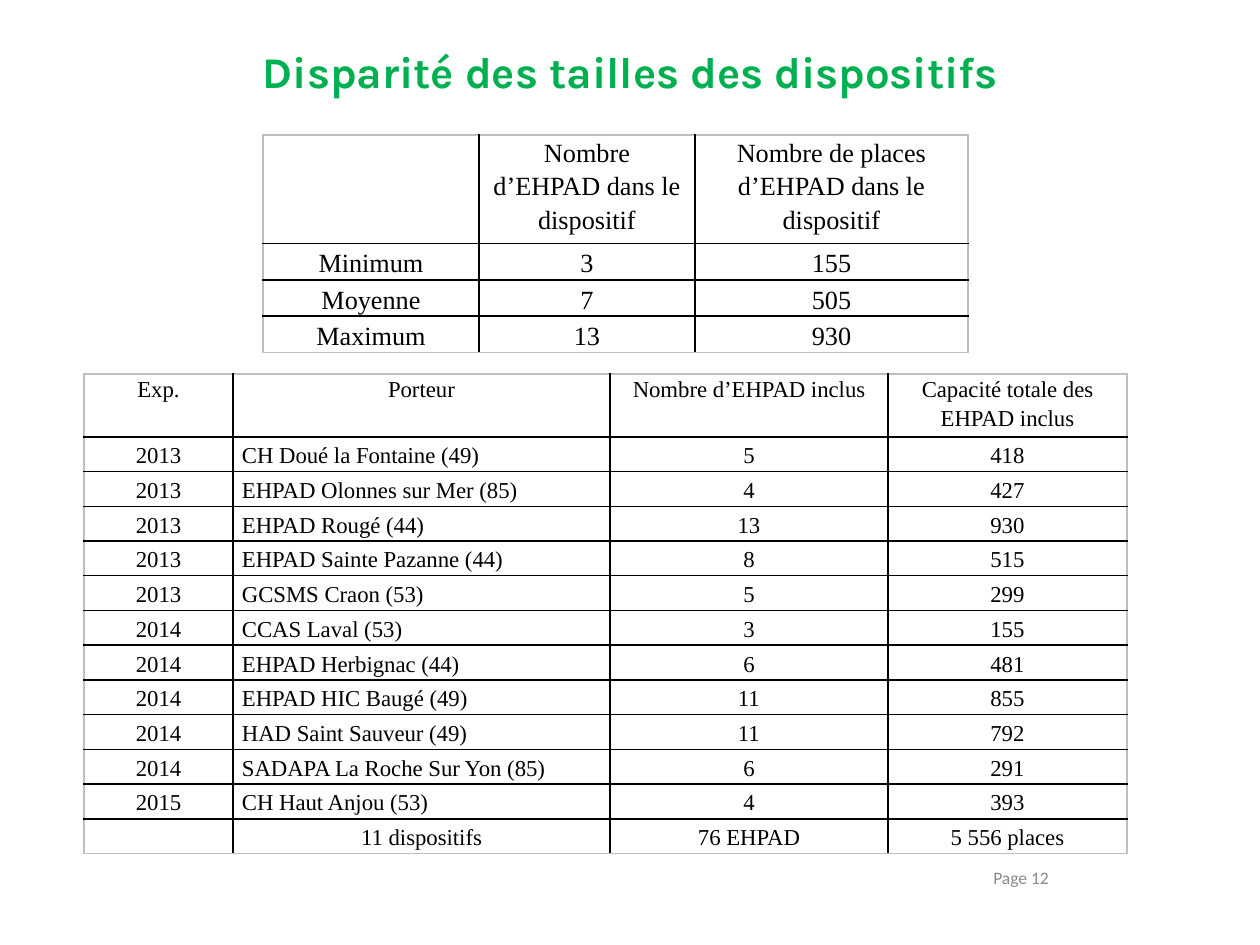
from lxml.etree import SubElement
from pptx import Presentation
from pptx.dml.color import RGBColor
from pptx.enum.text import MSO_ANCHOR, PP_ALIGN
from pptx.oxml.ns import qn
from pptx.util import Emu, Pt

COLORS = {"title": "00B050", "text": "000000", "page": "898989",
          "inner": "000000", "outer": "BFBFBF", "fill": "FFFFFF"}

SIZES = [
    ("", "Nombre d’EHPAD dans le dispositif", "Nombre de places d’EHPAD dans le dispositif"),
    ("Minimum", "3", "155"),
    ("Moyenne", "7", "505"),
    ("Maximum", "13", "930"),
]
PROJECTS = [
    ("Exp.", "Porteur", "Nombre d’EHPAD inclus", "Capacité totale des EHPAD inclus"),
    ("2013", "CH Doué la Fontaine (49)", "5", "418"),
    ("2013", "EHPAD Olonnes sur Mer (85)", "4", "427"),
    ("2013", "EHPAD Rougé (44)", "13", "930"),
    ("2013", "EHPAD Sainte Pazanne (44)", "8", "515"),
    ("2013", "GCSMS Craon (53)", "5", "299"),
    ("2014", "CCAS Laval (53)", "3", "155"),
    ("2014", "EHPAD Herbignac (44)", "6", "481"),
    ("2014", "EHPAD HIC Baugé (49)", "11", "855"),
    ("2014", "HAD Saint Sauveur (49)", "11", "792"),
    ("2014", "SADAPA La Roche Sur Yon (85)", "6", "291"),
    ("2015", "CH Haut Anjou (53)", "4", "393"),
    ("", "11 dispositifs", "76 EHPAD", "5 556 places"),
]


def px(n):
    """Turn pixels at 126 to the inch into EMU."""
    return Emu(round(n * 914400 / 126))


def style(font, name, size, color, bold=False):
    """Set the look of a font."""
    font.name, font.size, font.bold = name, Pt(size), bold
    font.color.rgb = RGBColor.from_string(COLORS[color])


def add_title(s, text, box):
    """Fill and place the title placeholder."""
    sp = s.shapes.title
    sp.left, sp.top, sp.width, sp.height = map(px, box)
    tf = sp.text_frame
    tf.text = text
    tf.vertical_anchor = MSO_ANCHOR.TOP
    p = tf.paragraphs[0]
    p.alignment = PP_ALIGN.CENTER
    style(p.runs[0].font, "Karla", 25, "title", True)


def add_page(s, text, box):
    """Add the page label."""
    tf = s.shapes.add_textbox(*map(px, box)).text_frame
    tf.word_wrap = True
    tf.text = text
    tf.vertical_anchor = MSO_ANCHOR.MIDDLE
    p = tf.paragraphs[0]
    p.alignment = PP_ALIGN.RIGHT
    style(p.runs[0].font, "Calibri", 10, "page")


def set_borders(cell, edges):
    """Draw the four borders, lighter on the outer edges of the table."""
    tcPr = cell._tc.get_or_add_tcPr()
    for side, outer in zip("LRTB", edges):
        ln = SubElement(tcPr, qn(f"a:ln{side}"), w=str(Pt(1)))
        fill = SubElement(ln, qn("a:solidFill"))
        SubElement(fill, qn("a:srgbClr"), val=COLORS["outer" if outer else "inner"])


def fill_cell(cell, text, size, align, anchor):
    """Write and format the text of a cell."""
    cell.margin_left = cell.margin_right = px(9)
    cell.margin_top = cell.margin_bottom = 0
    cell.vertical_anchor = anchor
    tf = cell.text_frame
    tf.text = text
    p = tf.paragraphs[0]
    p.alignment, p.line_spacing = align, 1.15
    for r in p.runs:
        style(r.font, "Times New Roman", size, "text")
    if not text:
        SubElement(p._p, qn("a:endParaRPr"), sz=str(size * 100))


def add_grid(s, rows, left, top, widths, height, header, size, fill=None, left_col=None):
    """Add a table with a tall header row and equal body rows."""
    n, m = len(rows), len(widths)
    frame = s.shapes.add_table(n, m, px(left), px(top), px(sum(widths)), px(height))
    table = frame.table
    table.first_row = table.horz_banding = False
    for column, width in zip(table.columns, widths):
        column.width = px(width)
    for i, values in enumerate(rows):
        table.rows[i].height = px((height - header) / (n - 1) if i else header)
        for j, text in enumerate(values):
            cell = table.cell(i, j)
            listed = j == left_col and 0 < i < n - 1
            fill_cell(cell, text, size, PP_ALIGN.LEFT if listed else PP_ALIGN.CENTER,
                      MSO_ANCHOR.MIDDLE if i else MSO_ANCHOR.TOP)
            set_borders(cell, (j == 0, j == m - 1, i == 0, i == n - 1))
            if fill:
                cell.fill.solid()
                cell.fill.fore_color.rgb = RGBColor.from_string(COLORS[fill])
            else:
                cell.fill.background()


def main():
    """Build the slide."""
    prs = Presentation()
    prs.slide_width, prs.slide_height = px(1260), px(945)
    s = prs.slides.add_slide(prs.slide_layouts[5])
    add_page(s, "Page 12", (917, 859, 144, 37))
    add_title(s, "Disparité des tailles des dispositifs", (63, 38, 1134, 58))
    add_grid(s, SIZES, 263, 135, (216, 216, 273), 204, 100, 15)
    add_grid(s, PROJECTS, 84, 374, (149, 377, 278, 239), 474, 57, 13, "fill", left_col=1)
    prs.save("out.pptx")


if __name__ == "__main__":
    main()
